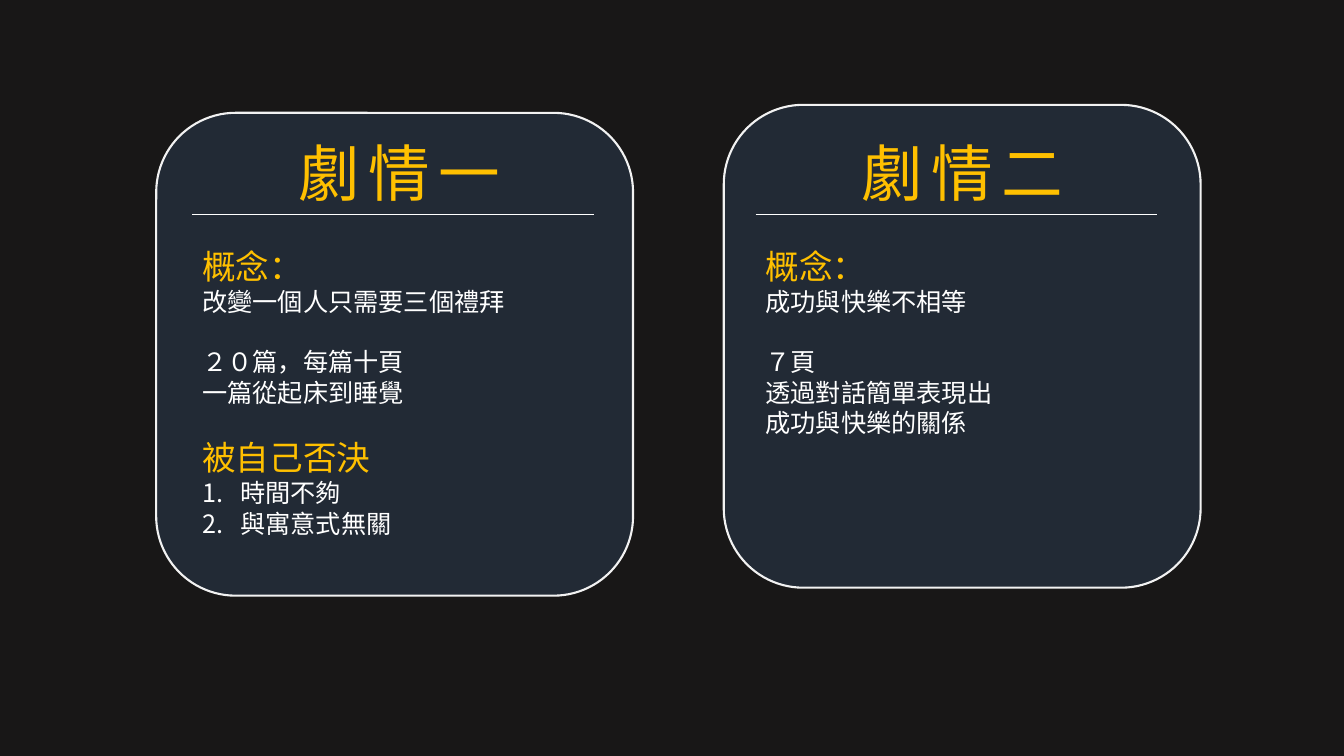
from dataclasses import dataclass

from lxml.etree import SubElement
from pptx import Presentation
from pptx.dml.color import RGBColor
from pptx.enum.shapes import MSO_CONNECTOR as Connector, MSO_SHAPE as Shape
from pptx.enum.text import MSO_AUTO_SIZE as AutoSize, PP_ALIGN as Align
from pptx.oxml.ns import qn
from pptx.slide import Slide
from pptx.util import Pt

COLORS = {
    "background": "181717",
    "card": "222A35",
    "border": "F2F2F2",
    "accent": "FFC000",
    "white": "FFFFFF",
}
FONT = "Noto Sans CJK JP"
BLANK_LINE = 21.6
LIST_INDENT = 27
FRAME_FORMAT = {"word_wrap": True, "auto_size": AutoSize.SHAPE_TO_FIT_TEXT}


@dataclass(frozen=True)
class Line:
    text: str
    size: float = 18
    color: str = "white"
    space_before: float = 0
    align: Align = Align.LEFT
    numbered: bool = False
    letter_spacing: float = 0


@dataclass(frozen=True)
class Plot:
    title: str
    card_left: float
    card_top: float
    content_left: float
    body_height: float
    lines: tuple[Line, ...]


PLOTS = (
    Plot("劇情一", 111.6, 80.6, 137.5, 218.2, (
        Line("概念：", 24, "accent"),
        Line("改變一個人只需要三個禮拜"),
        Line("２０篇，每篇十頁", space_before=BLANK_LINE),
        Line("一篇從起床到睡覺"),
        Line("被自己否決", 24, "accent", BLANK_LINE),
        Line("時間不夠", numbered=True),
        Line("與寓意式無關", numbered=True),
    )),
    Plot("劇情二", 517, 74.9, 539.7, 189.4, (
        Line("概念：", 24, "accent"),
        Line("成功與快樂不相等"),
        Line("７頁", space_before=BLANK_LINE),
        Line("透過對話簡單表現出"),
        Line("成功與快樂的關係"),
    )),
)


def rgb(name: str) -> RGBColor:
    return RGBColor.from_string(COLORS[name])


def apply_format(target: object, values: dict[str, object]) -> None:
    for name, value in values.items():
        setattr(target, name, value)


def add_card(slide: Slide, left: float, top: float) -> None:
    shape = slide.shapes.add_shape(
        Shape.ROUNDED_RECTANGLE, Pt(left), Pt(top), Pt(340.6), Pt(344.9))
    shape.shadow.inherit = False
    shape.fill.solid()
    shape.fill.fore_color.rgb = rgb("card")
    shape.line.color.rgb = rgb("border")
    shape.line.width = Pt(1.5)


def add_text(slide: Slide, left: float, top: float, width: float,
             height: float, lines: tuple[Line, ...]) -> None:
    box = slide.shapes.add_textbox(Pt(left), Pt(top), Pt(width), Pt(height))
    frame = box.text_frame
    apply_format(frame, FRAME_FORMAT)
    for index, line in enumerate(lines):
        paragraph = frame.add_paragraph() if index else frame.paragraphs[0]
        apply_format(paragraph, {
            "alignment": line.align, "space_before": Pt(line.space_before)})
        if line.numbered:
            properties = paragraph._p.get_or_add_pPr()
            properties.set("marL", str(Pt(LIST_INDENT)))
            properties.set("indent", str(-Pt(LIST_INDENT)))
            SubElement(properties, qn("a:buFont"), typeface="+mj-lt")
            SubElement(properties, qn("a:buAutoNum"), type="arabicPeriod")
        run = paragraph.add_run()
        run.text = line.text
        apply_format(run.font, {"name": FONT, "size": Pt(line.size)})
        run.font.color.rgb = rgb(line.color)
        run_properties = run._r.get_or_add_rPr()
        SubElement(run_properties, qn("a:ea"), typeface=FONT)
        if line.letter_spacing:
            run_properties.set("spc", str(int(line.letter_spacing * 100)))


def add_rule(slide: Slide, left: float, top: float, width: float) -> None:
    connector = slide.shapes.add_connector(
        Connector.STRAIGHT, Pt(left), Pt(top), Pt(left + width), Pt(top))
    connector.line.color.rgb = rgb("white")
    connector.line.width = Pt(0.5)
    SubElement(connector._element.spPr, qn("a:effectLst"))


def add_plot(slide: Slide, plot: Plot) -> None:
    left = plot.content_left
    title = Line(plot.title, 44, "accent", align=Align.CENTER, letter_spacing=6)
    add_card(slide, plot.card_left, plot.card_top)
    add_text(slide, left + 22.2, 92.9, 251.3, 60.5, (title,))
    add_text(slide, left, 172.1, 295.2, plot.body_height, plot.lines)
    add_rule(slide, left, 153.4, 287)


def main() -> None:
    presentation = Presentation()
    apply_format(presentation, {"slide_width": Pt(960), "slide_height": Pt(540)})
    slide = presentation.slides.add_slide(presentation.slide_layouts[6])
    slide.background.fill.solid()
    slide.background.fill.fore_color.rgb = rgb("background")
    for plot in PLOTS:
        add_plot(slide, plot)
    presentation.save("out.pptx")


if __name__ == "__main__":
    main()
